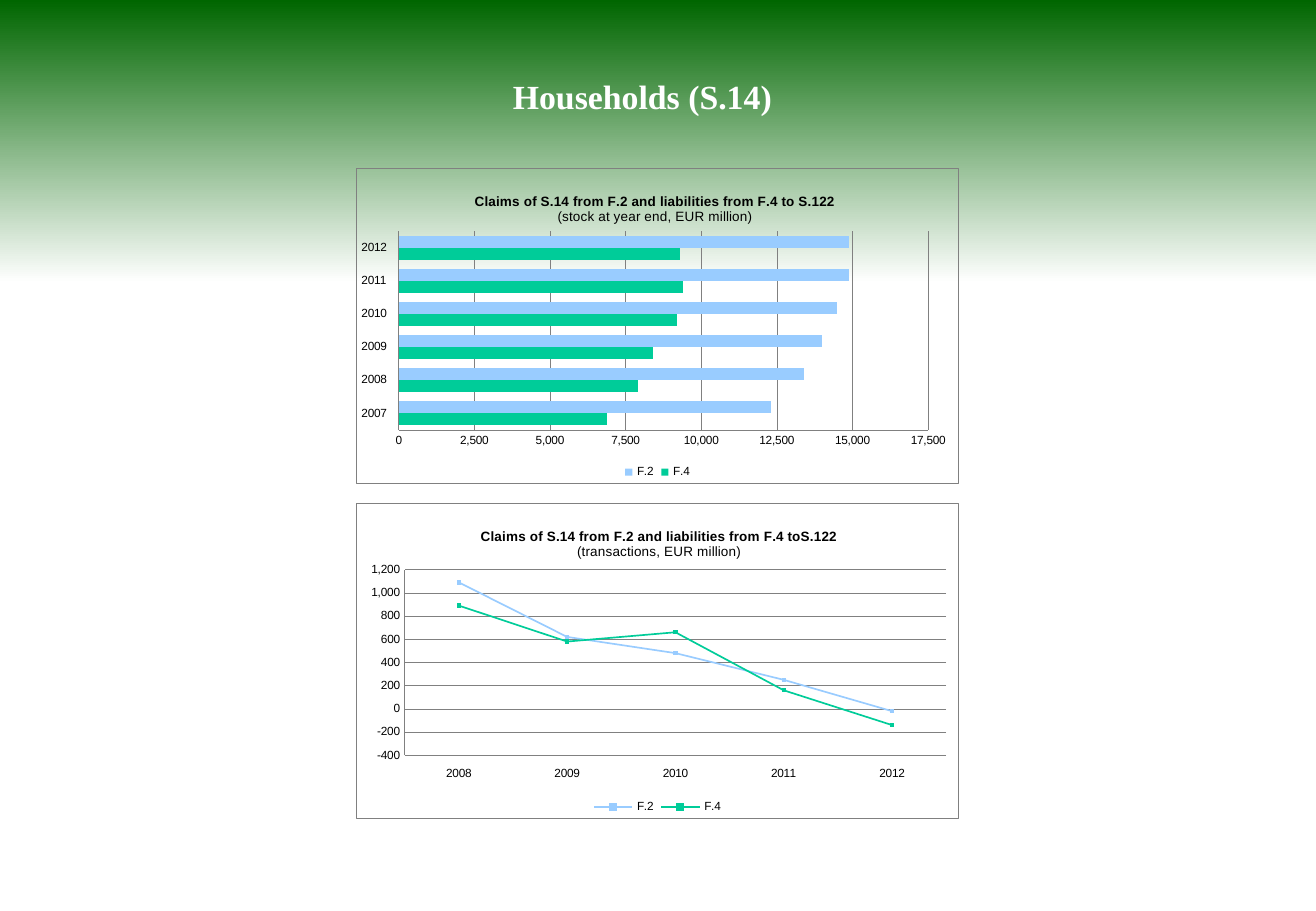
"""Build the households slide with its two charts of claims and liabilities."""
from lxml import etree
from pptx import Presentation
from pptx.chart.data import CategoryChartData
from pptx.dml.color import RGBColor
from pptx.enum.chart import (
    XL_CHART_TYPE as ChartType,
    XL_LEGEND_POSITION as LegendPosition,
    XL_MARKER_STYLE as MarkerStyle,
    XL_TICK_LABEL_POSITION as LabelPosition,
    XL_TICK_MARK as TickMark,
)
from pptx.enum.shapes import MSO_SHAPE as Preset
from pptx.enum.text import MSO_ANCHOR as Anchor, PP_ALIGN as Align
from pptx.oxml import parse_xml
from pptx.oxml.ns import nsdecls, qn
from pptx.util import Pt

PX = 7526
COLORS = {
    "banner": "006600", "paper": "FFFFFF", "text": "000000",
    "rule": "808080", "F.2": "99CCFF", "F.4": "00CC99",
}


def rgb(name):
    return RGBColor.from_string(COLORS[name])


class SlideBuilder:
    """Hold the style and the current slide, and add elements to it."""

    heading_font = "Times New Roman"
    chart_font = "Arial"

    def __init__(self, presentation):
        self.slide = presentation.slides.add_slide(presentation.slide_layouts[6])

    def box(self, *lengths):
        return [length * PX for length in lengths]

    def style_font(self, font, name, size, color, bold=False):
        font.name, font.size, font.bold = name, Pt(size), bold
        font.color.rgb = rgb(color)

    def gradient_banner(self, left, top, width, height):
        shape = self.slide.shapes.add_shape(
            Preset.RECTANGLE, *self.box(left, top, width, height))
        shape.shadow.inherit = False
        shape.line.fill.background()
        shape.fill.gradient()
        shape.fill.gradient_angle = 270
        for stop, color in zip(shape.fill.gradient_stops, ("banner", "paper")):
            stop.color.rgb = rgb(color)

    def heading(self, text, left, top, width, height):
        shape = self.slide.shapes.add_textbox(*self.box(left, top, width, height))
        frame = shape.text_frame
        frame.word_wrap = True
        frame.vertical_anchor = Anchor.MIDDLE
        frame.text = text
        paragraph = frame.paragraphs[0]
        paragraph.alignment = Align.CENTER
        self.style_font(paragraph.runs[0].font, self.heading_font, 20, "paper", True)

    def place(self, parent, index, inner=False, **fractions):
        layout = parent.find(qn("c:layout"))
        if layout is not None:
            parent.remove(layout)
        layout = parse_xml(f"<c:layout {nsdecls('c')}><c:manualLayout/></c:layout>")
        settings = {"layoutTarget": "inner"} if inner else {}
        settings.update(xMode="edge", yMode="edge", **fractions)
        for tag, value in settings.items():
            etree.SubElement(layout[0], qn(f"c:{tag}")).set("val", str(value))
        parent.insert(index, layout)

    def chart_title(self, chart, lines):
        frame = chart.chart_title.text_frame
        frame.text = "\n".join(lines)
        for index, paragraph in enumerate(frame.paragraphs):
            self.style_font(paragraph.runs[0].font, self.chart_font, 8, "text", index == 0)
        chart.chart_title.include_in_layout = False

    def chart_frame(self, chart):
        chart.element.find(qn("c:chart")).addnext(parse_xml(
            f'<c:spPr {nsdecls("c", "a")}><a:noFill/><a:ln w="9525"><a:solidFill>'
            f'<a:srgbClr val="{COLORS["rule"]}"/></a:solidFill></a:ln></c:spPr>'))

    def axes(self, chart, minimum, maximum, step):
        value_axis, category_axis = chart.value_axis, chart.category_axis
        for axis in (value_axis, category_axis):
            axis.major_tick_mark = axis.minor_tick_mark = TickMark.NONE
            axis.format.line.color.rgb = rgb("rule")
            axis.format.line.width = Pt(0.25)
            self.style_font(axis.tick_labels.font, self.chart_font, 7, "text")
        category_axis.tick_label_position = LabelPosition.LOW
        value_axis.minimum_scale, value_axis.maximum_scale = minimum, maximum
        value_axis.major_unit = step
        value_axis.has_major_gridlines = True
        gridline = value_axis.major_gridlines.format.line
        gridline.color.rgb, gridline.width = rgb("rule"), Pt(0.25)
        value_axis.tick_labels.number_format = "#,##0"
        value_axis.tick_labels.number_format_is_linked = False

    def chart(self, kind, top, title, years, series, scale, title_at, plot_at):
        data = CategoryChartData(number_format="#,##0")
        data.categories = [str(year) for year in years]
        for name, values in series.items():
            data.add_series(name, values)
        chart = self.slide.shapes.add_chart(
            kind, *self.box(356, top, 603, 316), data).chart
        self.style_font(chart.font, self.chart_font, 7, "text")
        self.chart_title(chart, title)
        self.place(chart.chart_title.element, 1, **title_at)
        self.place(chart.element.find(qn("c:chart")).find(qn("c:plotArea")), 0, True, **plot_at)
        self.chart_frame(chart)
        self.axes(chart, *scale)
        chart.has_legend = True
        chart.legend.position = LegendPosition.BOTTOM
        chart.legend.include_in_layout = False
        self.style_font(chart.legend.font, self.chart_font, 7, "text")
        chart.plots[0].vary_by_categories = False
        return chart.plots[0]

    def bar_chart(self, *details):
        plot = self.chart(ChartType.BAR_CLUSTERED, *details)
        plot.gap_width, plot.overlap = 75, 0
        for series in plot.series:
            series.format.fill.solid()
            series.format.fill.fore_color.rgb = rgb(series.name)

    def line_chart(self, *details):
        for series in self.chart(ChartType.LINE_MARKERS, *details).series:
            series.smooth = False
            series.format.line.color.rgb = rgb(series.name)
            series.format.line.width = Pt(1)
            marker = series.marker
            marker.style, marker.size = MarkerStyle.SQUARE, 2
            marker.format.fill.solid()
            marker.format.fill.fore_color.rgb = rgb(series.name)
            marker.format.line.color.rgb = rgb(series.name)


def main():
    presentation = Presentation()
    presentation.slide_width, presentation.slide_height = 1316 * PX, 911 * PX
    builder = SlideBuilder(presentation)
    builder.gradient_banner(0, 0, 1316, 283)
    builder.heading("Households (S.14)", 83, 57, 1119, 77)
    builder.bar_chart(
        168,
        ("Claims of S.14 from F.2 and liabilities from F.4 to S.122",
         "(stock at year end, EUR million)"),
        range(2007, 2013),
        {"F.4": (6900, 7900, 8400, 9200, 9400, 9300),
         "F.2": (12300, 13400, 14000, 14500, 14900, 14900)},
        (0, 17500, 2500),
        {"x": 0.19, "y": 0.06},
        {"x": 0.07, "y": 0.2, "w": 0.88, "h": 0.63},
    )
    builder.line_chart(
        503,
        ("Claims of S.14 from F.2 and liabilities from F.4 toS.122",
         "(transactions, EUR million)"),
        range(2008, 2013),
        {"F.2": (1090, 620, 480, 250, -20),
         "F.4": (890, 580, 660, 160, -140)},
        (-400, 1200, 200),
        {"x": 0.2, "y": 0.06},
        {"x": 0.08, "y": 0.21, "w": 0.9, "h": 0.59},
    )
    presentation.save("out.pptx")


if __name__ == "__main__":
    main()
